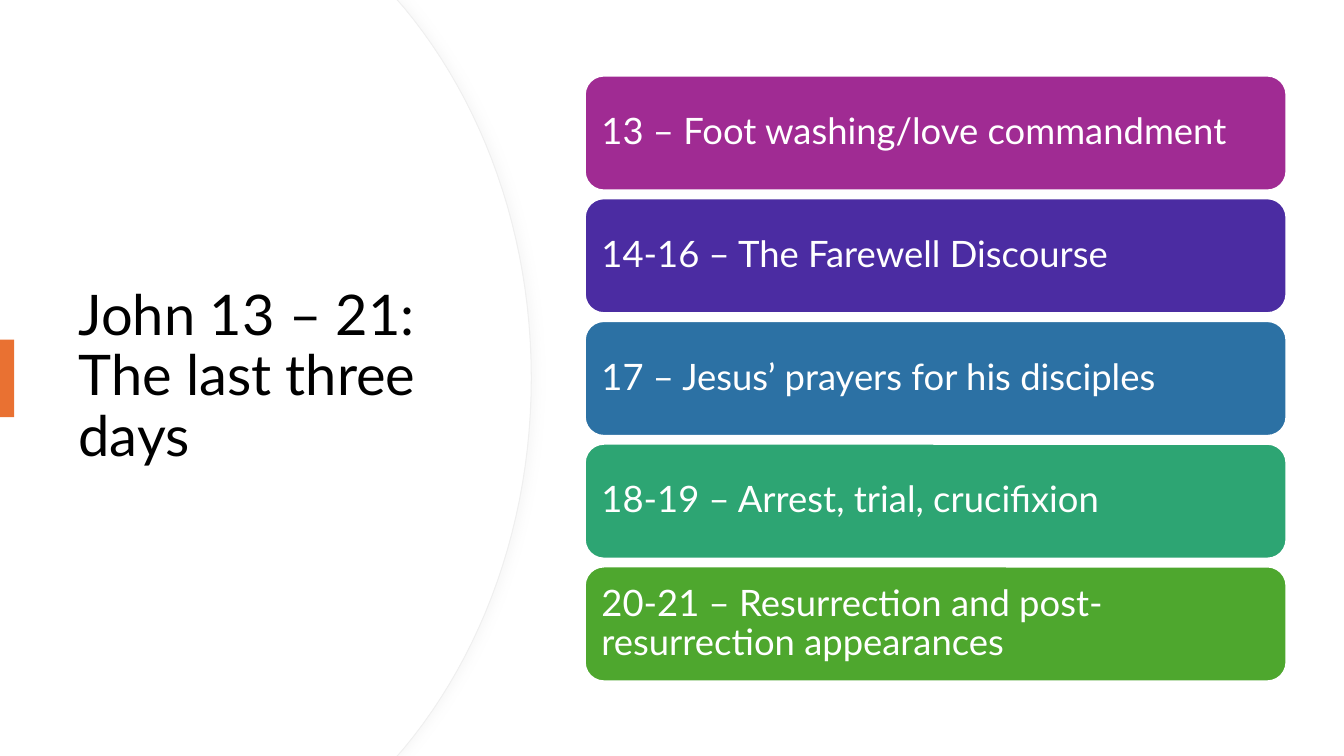
"""Build the John 13 – 21 overview slide."""
from lxml import etree
from pptx import Presentation
from pptx.dml.color import RGBColor
from pptx.enum import shapes, text
from pptx.oxml import ns
from pptx.util import Inches, Pt

COLORS = {"white": "FFFFFF", "black": "000000", "accent": "E97132",
          "edge": "EFEFEF", "shadow": "D9D9D9"}
CHAPTERS = [
    ("13 – Foot washing/love commandment", "A02B93"),
    ("14-16 – The Farewell Discourse", "4B2CA2"),
    ("17 – Jesus’ prayers for his disciples", "2C71A4"),
    ("18-19 – Arrest, trial, crucifixion", "2DA573"),
    ("20-21 – Resurrection and post-resurrection appearances", "4EA72E"),
]
HEIGHT = 7.5
CURVE_STEPS = 24
FIRST_TOP, LAST_TOP = 0.75, 5.62
CARD_STEP = (LAST_TOP - FIRST_TOP) / (len(CHAPTERS) - 1)


def paint(shape, fill, line=None, width=0):
    shape.shadow.inherit = False
    shape.fill.solid()
    shape.fill.fore_color.rgb = RGBColor.from_string(fill)
    if line:
        shape.line.color.rgb = RGBColor.from_string(line)
        shape.line.width = Pt(width)
    else:
        shape.line.fill.background()


def write(box, words, size, color, inset_x, inset_y):
    frame = box.text_frame
    frame.text = words
    frame_format = {
        "word_wrap": True, "auto_size": text.MSO_AUTO_SIZE.NONE,
        "vertical_anchor": text.MSO_ANCHOR.MIDDLE,
        "margin_left": Inches(inset_x), "margin_right": Inches(inset_x),
        "margin_top": Inches(inset_y), "margin_bottom": Inches(inset_y),
    }
    for name, value in frame_format.items():
        setattr(frame, name, value)
    para = frame.paragraphs[0]
    para.alignment = text.PP_ALIGN.LEFT
    para.line_spacing = 0.9
    font = para.runs[0].font
    for name, value in {"name": "Lato", "size": Pt(size)}.items():
        setattr(font, name, value)
    font.color.rgb = RGBColor.from_string(color)


deck = Presentation()
deck.slide_width, deck.slide_height = Inches(13.33), Inches(HEIGHT)
page = deck.slides.add_slide(deck.slide_layouts[5])

for panel_width, edge in ((5.27, COLORS["edge"]), (5.26, None)):
    upper = [(panel_width - 1.33, 0)]
    for step in range(CURVE_STEPS + 1):
        t = step / CURVE_STEPS
        inward = 1.26 * (1 - t) ** 3 + 3 * 0.48 * t * (1 - t) ** 2
        y = (0.08 * (1 - t) ** 3 + 3 * 1.02 * t * (1 - t) ** 2
             + 3 * 2.32 * t ** 2 * (1 - t) + 3.75 * t ** 3)
        upper.append((panel_width - inward, y))
    lower = [(x, HEIGHT - y) for x, y in reversed(upper[:-1])]
    outline = [(Inches(x), Inches(y)) for x, y in upper + lower + [(0, HEIGHT)]]
    builder = page.shapes.build_freeform(0, 0)
    builder.add_line_segments(outline, close=True)
    panel = builder.convert_to_shape()
    paint(panel, COLORS["white"], edge, 0.75)
    if edge:
        effects = panel._element.spPr.find(ns.qn("a:effectLst"))
        shadow = etree.SubElement(effects, ns.qn("a:outerShdw"), blurRad=str(Pt(7)),
                                  dist=str(Pt(3)), dir="0", algn="l", rotWithShape="0")
        tint = etree.SubElement(shadow, ns.qn("a:srgbClr"), val=COLORS["shadow"])
        etree.SubElement(tint, ns.qn("a:alpha"), val="20000")

title = page.shapes.title
page.shapes._spTree.append(title._element)
title.left, title.top = Inches(0.68), Inches(1.27)
title.width, title.height = Inches(3.94), Inches(4.95)
write(title, "John 13 – 21: The last three days", 40, COLORS["black"], 0.1, 0.05)

marker = page.shapes.add_shape(shapes.MSO_SHAPE.RECTANGLE, 0, Inches(3.37),
                               Inches(0.14), Inches(0.77))
paint(marker, COLORS["accent"])

for row, (words, color) in enumerate(CHAPTERS):
    card = page.shapes.add_shape(shapes.MSO_SHAPE.ROUNDED_RECTANGLE, Inches(5.8),
                                 Inches(FIRST_TOP + CARD_STEP * row),
                                 Inches(6.96), Inches(1.14))
    paint(card, color, COLORS["white"], 1.5)
    write(card, words, 26, COLORS["white"], 0.11, 0.11)

deck.save("out.pptx")
